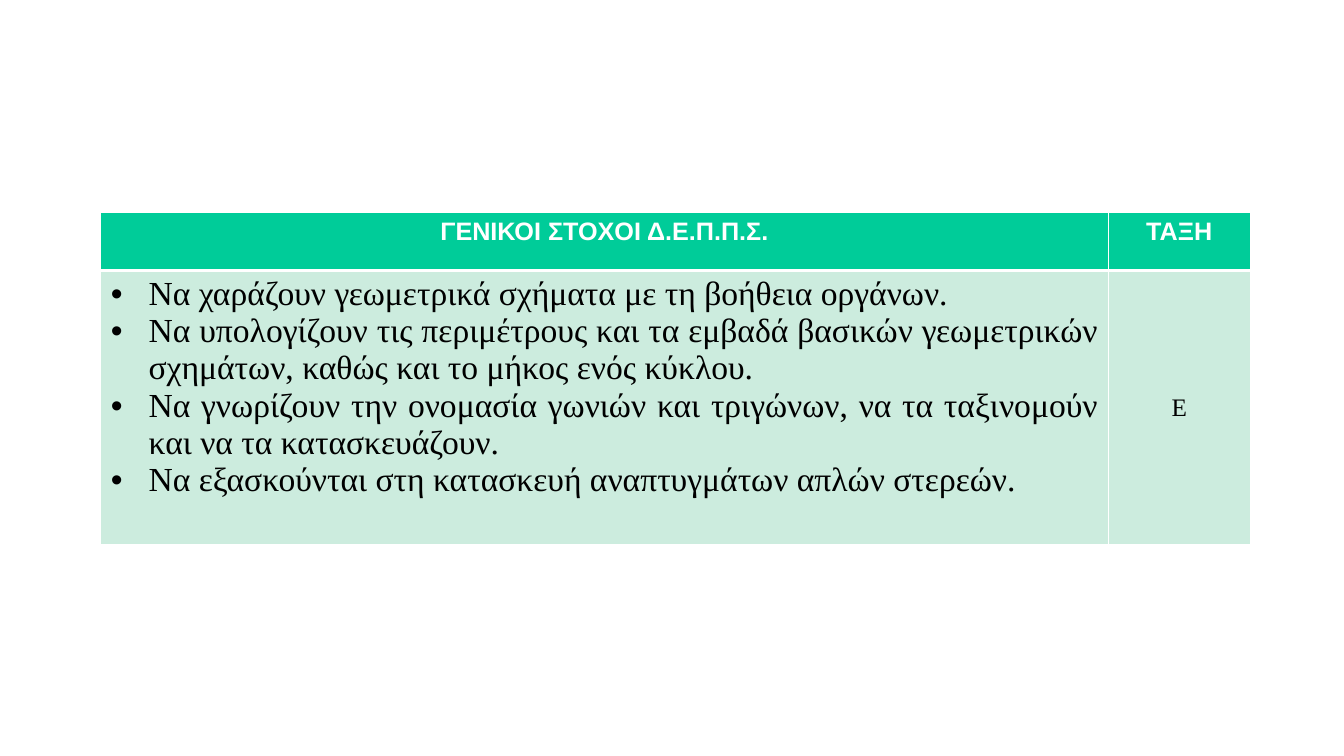
from lxml.etree import SubElement
from pptx import Presentation
from pptx.dml.color import RGBColor
from pptx.enum.text import MSO_ANCHOR as Anchor, PP_ALIGN as Align
from pptx.oxml.ns import qn
from pptx.util import Pt

COLORS = {"header": "00CC99", "body": "CCECDE", "white": "FFFFFF", "black": "000000"}
BULLET_INDENT = Pt(27)

goals = [
    "Να χαράζουν γεωμετρικά σχήματα με τη βοήθεια οργάνων.",
    "Να υπολογίζουν τις περιμέτρους και τα εμβαδά βασικών γεωμετρικών σχημάτων, "
    "καθώς και το μήκος ενός κύκλου.",
    "Να γνωρίζουν την ονομασία γωνιών και τριγώνων, να τα ταξινομούν και να τα κατασκευάζουν.",
    "Να εξασκούνται στη κατασκευή αναπτυγμάτων απλών στερεών.",
]


def style_cell(cell, fill, borders):
    """Draw white borders, given as {side: points}, and fill the cell."""
    properties = cell._tc.get_or_add_tcPr()
    for side, width in borders.items():
        line = SubElement(properties, qn(f"a:ln{side}"), w=str(Pt(width)))
        solid = SubElement(line, qn("a:solidFill"))
        SubElement(solid, qn("a:srgbClr"), val=COLORS["white"])
    cell.fill.solid()
    cell.fill.fore_color.rgb = RGBColor.from_string(COLORS[fill])


def write_cell(cell, lines, align, font, size, color, bold):
    cell.text = "\n".join(lines)
    for paragraph in cell.text_frame.paragraphs:
        paragraph.alignment = align
        paragraph.font.name = font
        paragraph.font.size = Pt(size)
        paragraph.font.bold = bold
        paragraph.font.color.rgb = RGBColor.from_string(COLORS[color])


# Slide
prs = Presentation()
prs.slide_width, prs.slide_height = Pt(960.5), Pt(540)
slide = prs.slides.add_slide(prs.slide_layouts[6])

# Table grid
goals_table = slide.shapes.add_table(2, 2, Pt(72), Pt(151.5), Pt(821.5), Pt(237.6)).table
for column, width in zip(goals_table.columns, (720, 101.5)):
    column.width = Pt(width)
for row, height in zip(goals_table.rows, (41.8, 195.8)):
    row.height = Pt(height)

# Header row
for column, heading in enumerate(("ΓΕΝΙΚΟΙ ΣΤΟΧΟΙ Δ.Ε.Π.Π.Σ.", "ΤΑΞΗ")):
    header = goals_table.cell(0, column)
    style_cell(header, "header", {"L": 1, "R": 1, "T": 1, "B": 3})
    write_cell(header, [heading], Align.CENTER, "Arial", 18, "white", True)

# Body row
goals_cell, grade_cell = goals_table.cell(1, 0), goals_table.cell(1, 1)
for body in (goals_cell, grade_cell):
    style_cell(body, "body", {"L": 1, "R": 1, "T": 3, "B": 1})
write_cell(goals_cell, goals, Align.JUSTIFY, "Times New Roman", 24, "black", False)
write_cell(grade_cell, ["Ε"], Align.CENTER, "Times New Roman", 18, "black", False)
grade_cell.vertical_anchor = Anchor.MIDDLE

# Bullets of the goals
for goal in goals_cell.text_frame.paragraphs:
    properties = goal._p.get_or_add_pPr()
    properties.set("marL", str(BULLET_INDENT))
    properties.set("indent", str(-BULLET_INDENT))
    bullet_font = properties.makeelement(qn("a:buFont"), {"typeface": "Arial"})
    bullet = properties.makeelement(qn("a:buChar"), {"char": "•"})
    properties.insert(0, bullet_font)
    properties.insert(1, bullet)

prs.save("out.pptx")
